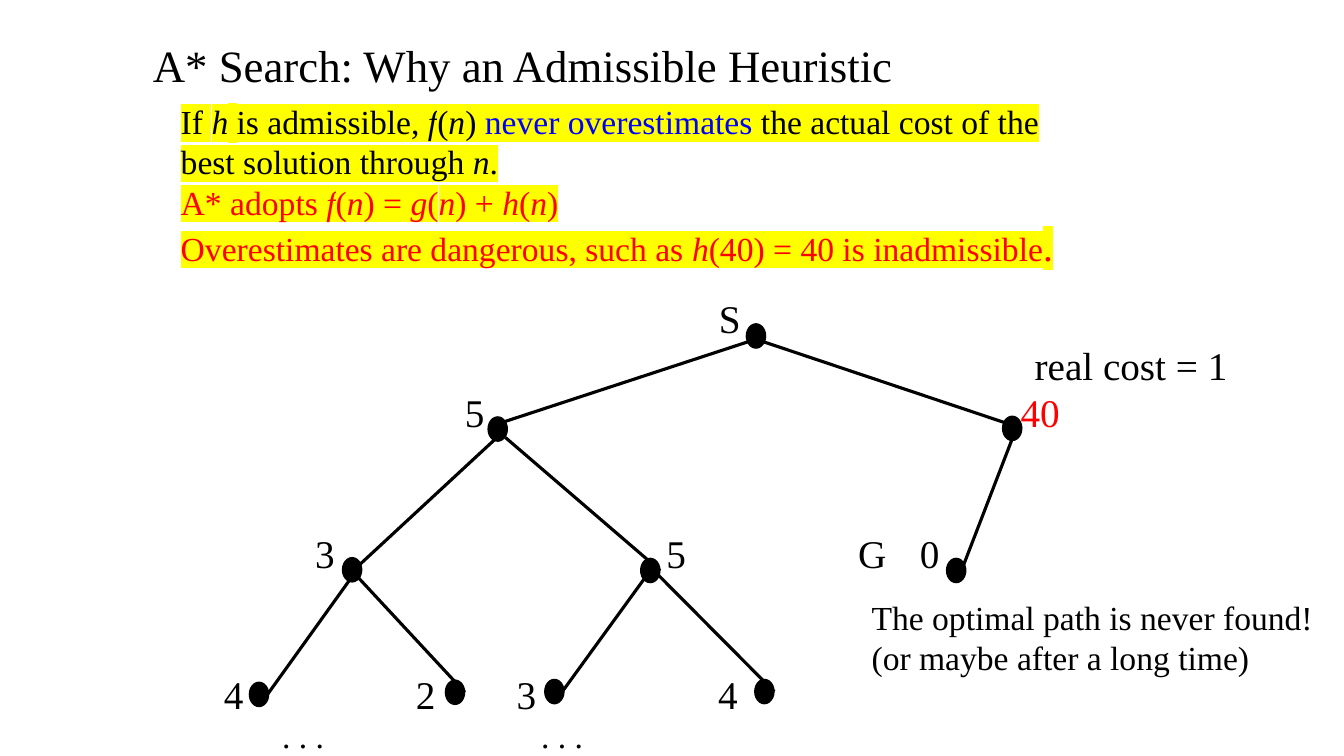
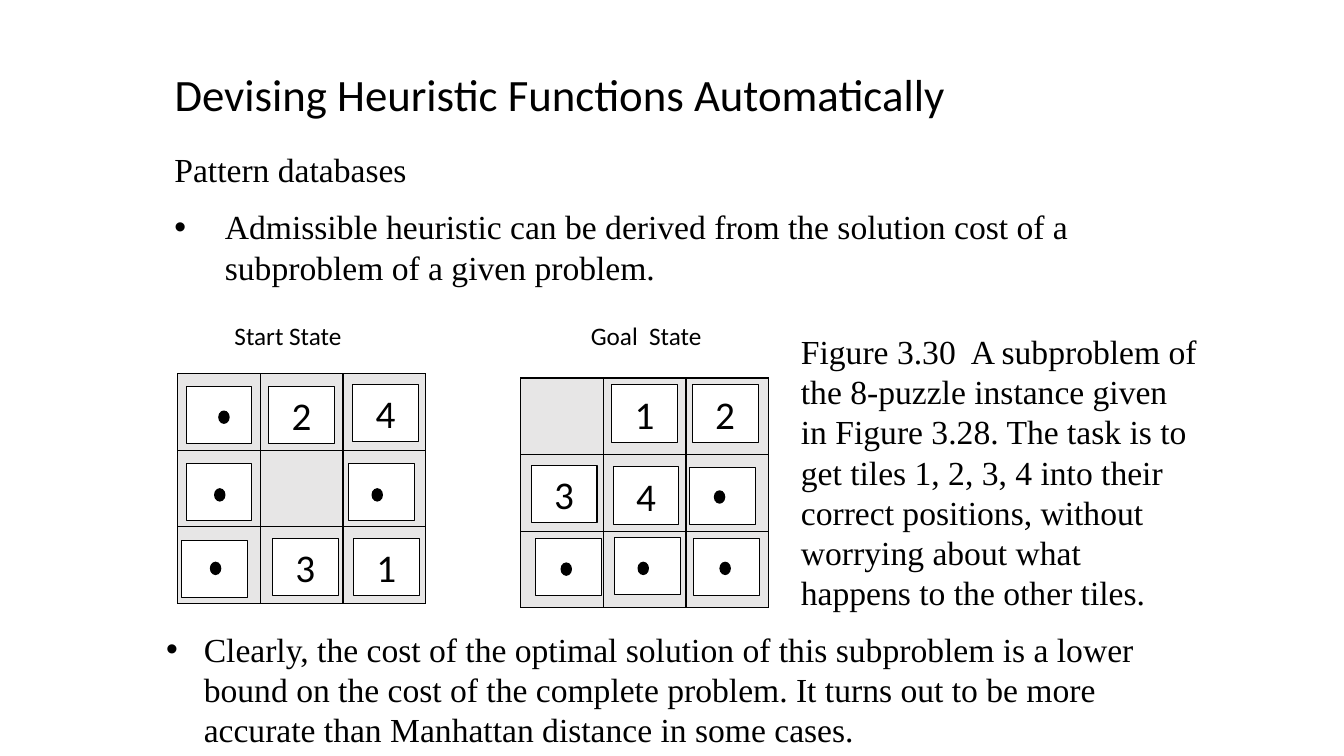
from lxml.etree import SubElement
from pptx import Presentation
from pptx.dml.color import RGBColor
from pptx.enum.shapes import MSO_CONNECTOR, MSO_SHAPE
from pptx.enum.text import MSO_ANCHOR, MSO_AUTO_SIZE, PP_ALIGN
from pptx.oxml.ns import qn
from pptx.util import Pt

SERIF, SANS = "Times New Roman", "Calibri"
BLACK, WHITE, GREY = "000000", "FFFFFF", "E7E6E6"
RED, BLUE, YELLOW = "FF0000", "0000FF", "FFFF00"


def color(code):
    return RGBColor.from_string(code)


class Deck:
    def __init__(self):
        self.prs = Presentation()
        self.prs.slide_width, self.prs.slide_height = Pt(960), Pt(540)
        self.slide = None

    def start(self, title, font, left, top, width):
        self.slide = self.prs.slides.add_slide(self.prs.slide_layouts[5])
        box = self.slide.shapes.title
        box.left, box.top, box.width, box.height = Pt(left), Pt(top), Pt(width), Pt(46)
        frame = box.text_frame
        frame.word_wrap = True
        frame.auto_size = MSO_AUTO_SIZE.NONE
        frame.vertical_anchor = MSO_ANCHOR.TOP
        frame.paragraphs[0].alignment = PP_ALIGN.LEFT
        self.run(frame.paragraphs[0], title, 32, font)

    def run(self, para, text, size=24, font=SERIF, ink=BLACK, mark=None):
        """Add text to a paragraph; parts between underscores are italic."""
        for index, part in enumerate(text.split("_")):
            if not part:
                continue
            run = para.add_run()
            run.text = part
            run.font.size, run.font.name = Pt(size), font
            run.font.italic = index % 2 == 1
            run.font.color.rgb = color(ink)
            if mark:
                props = run.font._element
                light = SubElement(props, qn("a:highlight"))
                SubElement(light, qn("a:srgbClr"), val=mark)
                props.find(qn("a:solidFill")).addnext(light)

    def text(self, left, top, width, height, *paras, after=0, pad=True):
        """Each paragraph is a list of (text, style) pairs."""
        box = self.slide.shapes.add_textbox(Pt(left), Pt(top), Pt(width), Pt(height))
        frame = box.text_frame
        frame.word_wrap = True
        if not pad:
            frame.margin_left = frame.margin_right = 0
            frame.margin_top = frame.margin_bottom = 0
        for index, runs in enumerate(paras):
            para = frame.add_paragraph() if index else frame.paragraphs[0]
            para.space_after = Pt(after)
            for words, style in runs:
                self.run(para, words, **style)
        return frame

    def label(self, words, left, top, width=60, **style):
        self.text(left, top, width, 28, [(words, style)], pad=False)

    def bullet(self, para, indent):
        props = para._p.get_or_add_pPr()
        props.set("marL", str(Pt(indent)))
        props.set("indent", str(-Pt(indent)))
        SubElement(props, qn("a:buFont"), typeface="Arial")
        SubElement(props, qn("a:buChar"), char="•")

    def shape(self, kind, left, top, width, height, fill, line):
        item = self.slide.shapes.add_shape(kind, Pt(left), Pt(top), Pt(width), Pt(height))
        item.shadow.inherit = False
        item.fill.solid()
        item.fill.fore_color.rgb = color(fill)
        item.line.color.rgb = color(BLACK)
        item.line.width = Pt(line)
        return item

    def dot(self, x, y, width, height):
        """Draw a black ellipse centred on x, y."""
        self.shape(MSO_SHAPE.OVAL, x - width / 2, y - height / 2, width, height, BLACK, 1)

    def edge(self, *ends):
        line = self.slide.shapes.add_connector(MSO_CONNECTOR.STRAIGHT, *map(Pt, ends))
        line.line.color.rgb = color(BLACK)
        line.line.width = Pt(2.25)
        SubElement(line._element.spPr, qn("a:effectLst"))

    def tile(self, left, top, digit=None):
        item = self.shape(MSO_SHAPE.RECTANGLE, left, top, 47, 41, WHITE, 0.75)
        if digit:
            frame = item.text_frame
            frame.vertical_anchor = MSO_ANCHOR.TOP
            frame.paragraphs[0].alignment = PP_ALIGN.CENTER
            self.run(frame.paragraphs[0], digit, 28, SANS)

    def board(self, left, top, count=3, wide=59, high=54.7):
        grid = self.slide.shapes.add_table(
            count, count, Pt(left), Pt(top), Pt(wide * count), Pt(high * count)).table
        for col in grid.columns:
            col.width = Pt(wide)
        for row in grid.rows:
            row.height = Pt(high)
        for cell in grid.iter_cells():
            props = cell._tc.get_or_add_tcPr()
            for side in ("lnL", "lnR", "lnT", "lnB"):
                line = SubElement(props, qn("a:" + side), w=str(Pt(1)))
                SubElement(SubElement(line, qn("a:solidFill")), qn("a:srgbClr"), val=BLACK)
            cell.fill.solid()
            cell.fill.fore_color.rgb = color(GREY)


def search(deck):
    deck.start("A* Search: Why an Admissible Heuristic", SERIF, 102, 23, 581)
    plain = {"mark": YELLOW}
    red = {"mark": YELLOW, "ink": RED}
    deck.text(
        122, 68.5, 671, 128,
        [("If _h_", plain), (" ", {"mark": YELLOW, "font": "Roboto"}),
         ("is admissible, _f_(_n_) ", plain),
         ("never overestimates", {"mark": YELLOW, "ink": BLUE}),
         (" the actual cost of the best solution through _n_.", plain)],
        [("A* adopts _f_(_n_) = _g_(_n_) + _h_(_n_)", red)],
        [("Overestimates are dangerous, such as _h_(40) = 40 is inadmissible", red),
         (".", {**red, "size": 28})])

    rows = (210, 277.5, 378, 479)
    # Node centre, label, label left, label row
    nodes = (
        (540, 240, "S", 513.5, 0), (355.5, 306.5, "5", 332, 1),
        (723, 306, "40", 729, 1), (251.5, 407, "3", 225, 2),
        (464.5, 407.5, "5", 476, 2), (683, 407.5, "0", 657, 2),
        (185, 496, "4", 160, 3), (325, 494.5, "2", 297, 3),
        (396, 494, "3", 369, 3), (546, 494, "4", 513, 3))
    for x, y, name, left, row in nodes:
        deck.dot(x, y, 13.7, 17.3)
        deck.label(name, left, rows[row], size=28, ink=RED if name == "40" else BLACK)
    deck.label("G", 613, rows[2], size=28)
    for left in (201.5, 386.5):
        deck.label(". . .", left, 511)

    for ends in (
            (533, 240, 730, 306), (547, 240, 361, 301),
            (361.5, 306.5, 247, 412.5), (471.5, 407.5, 361, 312.5),
            (726.5, 304.5, 683.5, 416), (255, 407, 185, 504.5),
            (332, 494.5, 254, 410.5), (395.5, 502.5, 464.5, 407.5),
            (553, 494, 466.5, 407)):
        deck.edge(*ends)

    deck.text(732, 240, 161, 41, [("real cost = 1", {"size": 28})])
    deck.text(615.5, 422.5, 333.5, 65.5,
              [("The optimal path is never found! (or maybe after a long time)", {})])


def puzzle(deck):
    deck.start("Devising Heuristic Functions Automatically", SANS, 117.5, 44, 590)
    frame = deck.text(
        117.5, 103, 691, 106.5, [("Pattern databases", {})],
        [("Admissible heuristic can be derived from the solution cost of a "
          "subproblem of a given problem.", {})], after=12)
    deck.bullet(frame.paragraphs[1], 36)

    deck.label("Start State", 167.5, 229, 120, size=18, font=SANS)
    deck.label("Goal  State", 422, 229, 120, size=18, font=SANS)
    deck.board(127, 267)
    deck.board(372, 270)
    for digit, left, top in (
            ("2", 192, 276), ("4", 252, 274.5), ("3", 194.5, 384.5), ("1", 252.5, 384.5),
            ("1", 437, 275), ("2", 494.5, 275), ("3", 379.5, 332.5), ("4", 438, 333.5)):
        deck.tile(left, top, digit)
    # Tile corner, then dot centre
    for left, top, x, y in (
            (133, 276, 160, 298), (133, 331, 157, 353.5),
            (249, 331, 269.5, 353.5), (130, 386, 154, 406),
            (492.5, 334, 514, 355), (382.5, 384.5, 404.5, 406.5),
            (439, 384, 459.5, 406), (495.5, 384.5, 518, 406)):
        deck.tile(left, top)
        deck.dot(x, y, 7.2, 8.6)

    deck.text(565, 232.5, 297.5, 212.5,
              [("Figure 3.30  A subproblem of the 8-puzzle instance given in Figure 3.28. "
                "The task is to get tiles 1, 2, 3, 4 into their correct positions, without "
                "worrying about what happens to the other tiles.", {})])
    frame = deck.text(
        111.5, 445.5, 762.5, 94.5,
        [("Clearly, the cost of the optimal solution of this subproblem is a lower bound "
          "on the cost of the complete problem. It turns out to be more accurate than "
          "Manhattan distance in some cases.", {})])
    deck.bullet(frame.paragraphs[0], 27)


def main():
    deck = Deck()
    search(deck)
    puzzle(deck)
    deck.prs.save("out.pptx")


if __name__ == "__main__":
    main()
